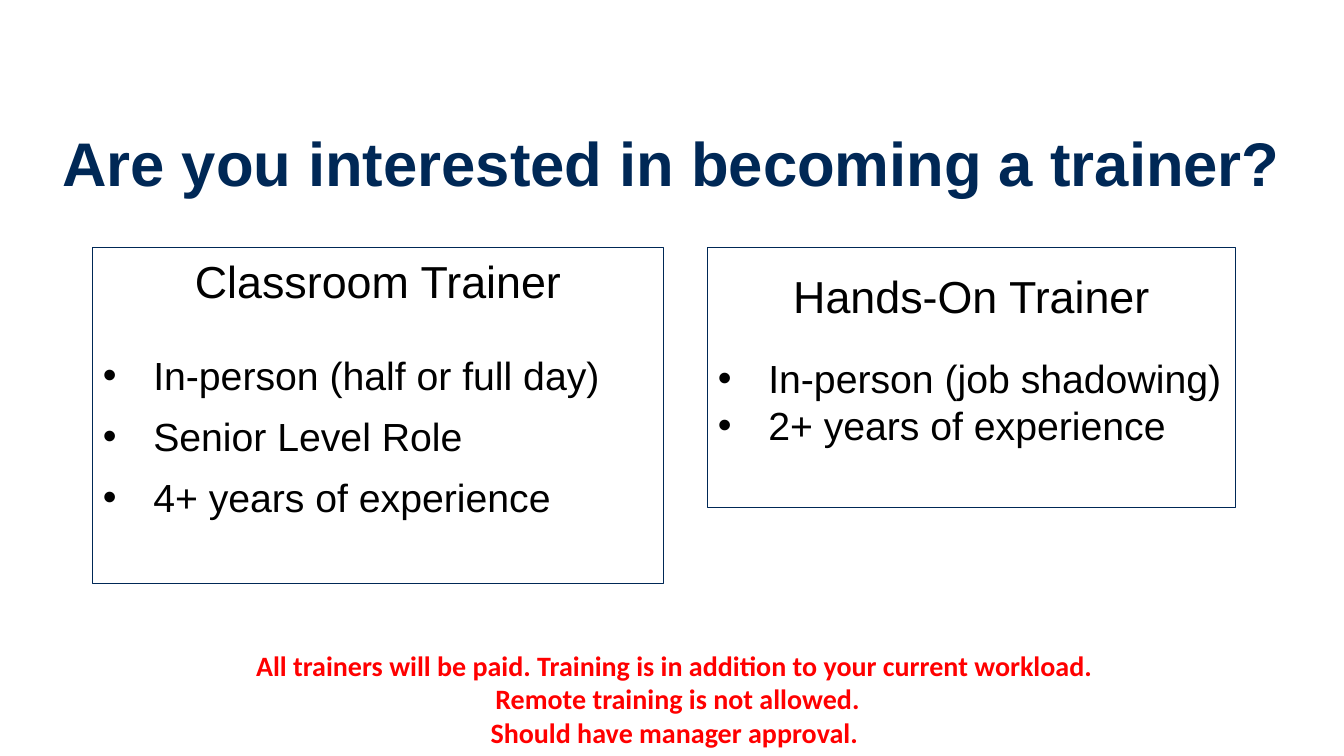
from lxml import etree
from pptx import Presentation
from pptx.dml.color import RGBColor
from pptx.enum import text
from pptx.oxml.ns import qn
from pptx.util import Inches, Pt

NAVY = RGBColor(0x00, 0x28, 0x56)
BLACK = RGBColor(0x00, 0x00, 0x00)
RED = RGBColor(0xFF, 0x00, 0x00)
CENTER, LEFT = text.PP_ALIGN.CENTER, text.PP_ALIGN.LEFT

TITLE = dict(name="Arial", size=Pt(44), bold=True, color=NAVY)
HEADING = dict(name="Arial", size=Pt(32), bold=False, color=BLACK)
ITEM = dict(name="Arial", size=Pt(28), bold=False, color=BLACK)
NOTE = dict(name="Calibri", size=Pt(20), bold=True, color=RED)


def place(sp, box, **frame):
    """Position a shape in inches and set up its text frame."""
    sp.left, sp.top, sp.width, sp.height = map(Inches, box)
    tf = sp.text_frame
    frame = dict(word_wrap=True, auto_size=text.MSO_AUTO_SIZE.NONE,
                 vertical_anchor=text.MSO_ANCHOR.TOP) | frame
    for key, value in frame.items():
        setattr(tf, key, value)
    return tf


def set_bullet(p, bullet):
    pPr = p._p.get_or_add_pPr()
    pPr.set("marL", str(Inches(0.5 if bullet else 0)))
    pPr.set("indent", str(Inches(-0.5 if bullet else 0)))
    if bullet:
        etree.SubElement(pPr, qn("a:buFont")).set("typeface", "Arial")
        etree.SubElement(pPr, qn("a:buChar")).set("char", "•")
    else:
        etree.SubElement(pPr, qn("a:buNone"))


def add_line(tf, words, font, bullet=False, **layout):
    p = tf.paragraphs[0] if not tf.text else tf.add_paragraph()
    set_bullet(p, bullet)
    layout = dict(alignment=LEFT if bullet else CENTER, space_before=Pt(0)) | layout
    for key, value in layout.items():
        setattr(p, key, value)
    r = p.add_run()
    r.text = words
    for key, value in font.items():
        if key == "color":
            r.font.color.rgb = value
        else:
            setattr(r.font, key, value)


def add_title(sp, box, words):
    tf = place(sp, box, vertical_anchor=text.MSO_ANCHOR.MIDDLE)
    add_line(tf, words, TITLE, line_spacing=0.9)


def add_role(sp, box, heading, items, inset, list_gap, item_gap):
    """Outlined panel with a centred heading and a bullet list."""
    tf = place(sp, box, margin_top=Inches(inset))
    sp.fill.background()
    sp.line.color.rgb = NAVY
    sp.line.width = Pt(0.75)
    add_line(tf, heading, HEADING, line_spacing=Pt(39))
    for i, item in enumerate(items):
        add_line(tf, item, ITEM, bullet=True, line_spacing=Pt(34),
                 space_before=Pt(item_gap if i else list_gap))


def add_notes(s, box, lines):
    tf = place(s.shapes.add_textbox(0, 0, 0, 0), box)
    for line in lines:
        add_line(tf, line, NOTE)


def main():
    prs = Presentation()
    prs.slide_width, prs.slide_height = Inches(13.33), Inches(7.5)
    s = prs.slides.add_slide(prs.slide_layouts.get_by_name("Two Content"))
    title, classroom, hands_on = s.placeholders

    # Title
    add_title(title, (0, 1.12, 13.33, 1.07),
              "Are you interested in becoming a trainer?")

    # Trainer roles
    add_role(classroom, (0.92, 2.46, 5.66, 3.33), "Classroom Trainer",
             ["In-person (half or full day)", "Senior Level Role",
              "4+ years of experience"],
             inset=0.05, list_gap=31, item_gap=9.5)
    add_role(hands_on, (7.02, 2.46, 5.23, 2.58), "Hands-On Trainer",
             ["In-person (job shadowing)", "2+ years of experience"],
             inset=0.2, list_gap=22, item_gap=0)

    # Conditions
    add_notes(s, (0.11, 6.38, 13.22, 1.12),
              ["All trainers will be paid. Training is in addition to your current workload. ",
               "Remote training is not allowed.",
               "Should have manager approval. "])

    prs.save("out.pptx")


if __name__ == "__main__":
    main()
